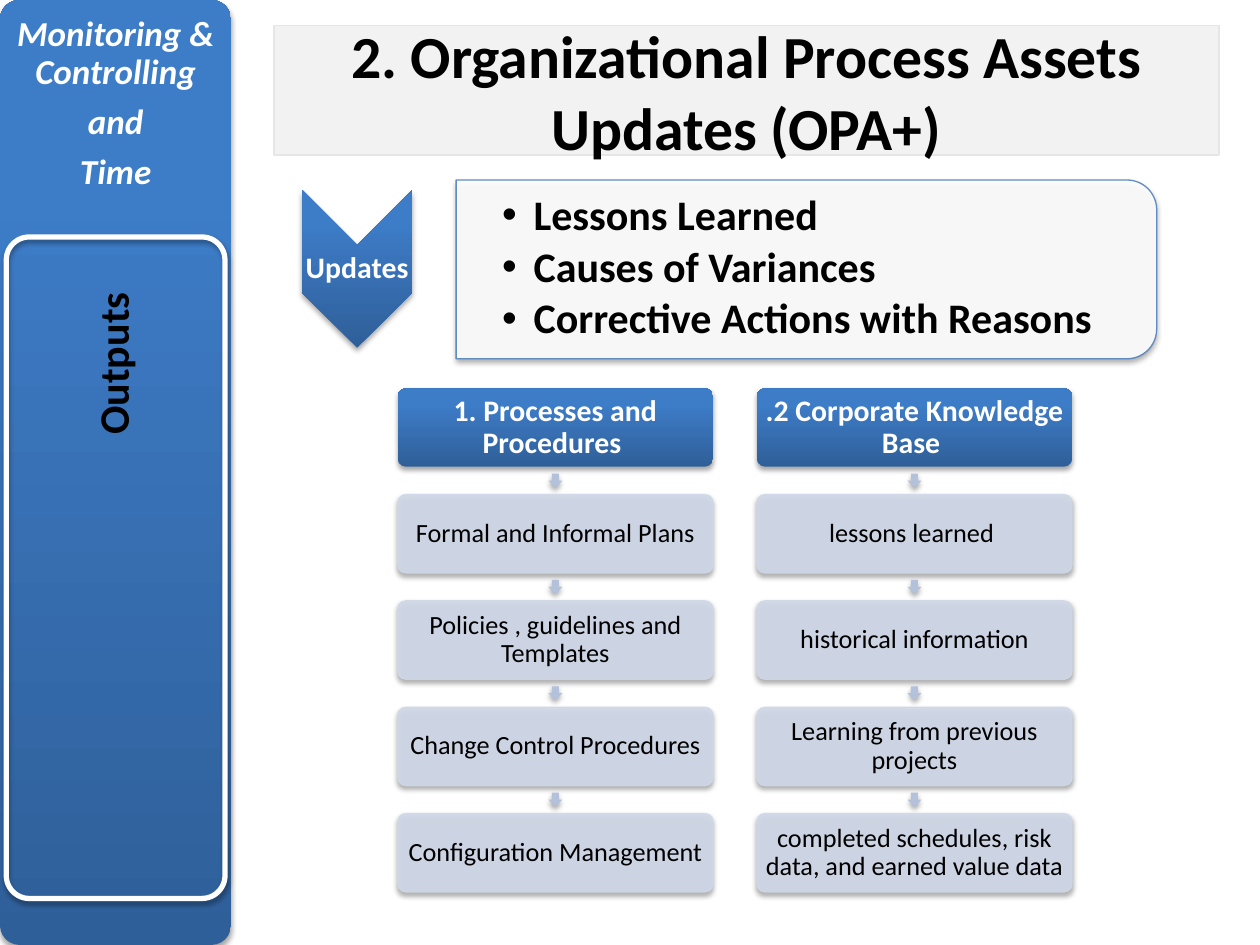
from lxml import etree
from pptx import Presentation
from pptx.dml.color import RGBColor
from pptx.enum.shapes import MSO_SHAPE
from pptx.enum.text import MSO_ANCHOR, PP_ALIGN
from pptx.oxml.ns import qn
from pptx.util import Pt

ROUND = MSO_SHAPE.ROUNDED_RECTANGLE
RECT = MSO_SHAPE.RECTANGLE
ARROW = MSO_SHAPE.DOWN_ARROW
CHEVRON = MSO_SHAPE.CHEVRON
TAB = MSO_SHAPE.ROUND_2_SAME_RECTANGLE
CENTER, LEFT = PP_ALIGN.CENTER, PP_ALIGN.LEFT
MIDDLE, TOP = MSO_ANCHOR.MIDDLE, MSO_ANCHOR.TOP

BLACK = RGBColor(0x00, 0x00, 0x00)
WHITE = RGBColor(0xFF, 0xFF, 0xFF)
DARK = RGBColor(0x2F, 0x5F, 0x99)
BRIGHT = RGBColor(0x3D, 0x7C, 0xC7)
EDGE = RGBColor(0x4F, 0x81, 0xBD)
PALE = RGBColor(0xD0, 0xD8, 0xE8)
STEEL = RGBColor(0xB3, 0xC1, 0xDB)
GREY = RGBColor(0xF2, 0xF2, 0xF2)
RIM = RGBColor(0xE6, 0xE6, 0xE6)

TITLE = {"size": Pt(34.1), "bold": True}
SIDE = {"size": Pt(20), "bold": True, "italic": True}
HEAD = {"size": Pt(17), "bold": True}
BODY = {"size": Pt(15)}
LARGE = {"size": Pt(24), "bold": True}
TIGHT = {"line_spacing": 0.9}

FLOWS = [
    ["1. Processes and Procedures ", "Formal and Informal Plans",
     "Policies , guidelines and Templates", "Change Control Procedures",
     "Configuration Management"],
    [".2 Corporate Knowledge Base ", "lessons learned ",
     "historical information", "Learning from previous projects",
     "completed schedules, risk data, and earned value data"],
]
POINTS = ["Lessons Learned", "Causes of Variances",
          "Corrective Actions with Reasons"]


def apply(target, form):
    for name, value in form.items():
        setattr(target, name, value)


def shade(shape):
    shape.shadow.inherit = False
    effects = shape._element.spPr.find(qn("a:effectLst"))
    drop = etree.SubElement(effects, qn("a:outerShdw"), blurRad=str(Pt(3.1)),
                            dist=str(Pt(1.8)), dir="5400000", rotWithShape="0")
    color = etree.SubElement(drop, qn("a:srgbClr"), val="000000")
    etree.SubElement(color, qn("a:alpha"), val="35000")


def fade(shape):
    for color in shape._element.spPr.iter(qn("a:srgbClr")):
        etree.SubElement(color, qn("a:alpha"), val="90000")


def blend(shape):
    fill = shape.fill
    fill.gradient()
    fill.gradient_angle = 90
    for stop, color, place in zip(fill.gradient_stops, (DARK, BRIGHT), (0, 0.8)):
        stop.color.rgb = color
        stop.position = place
    shape._element.spPr.find(qn("a:gradFill")).set("rotWithShape", "0")


def add_box(slide, kind, x, y, w, h, fill=None, line=None, width=0.75,
            curve=None, turn=0):
    shape = slide.shapes.add_shape(kind, Pt(x), Pt(y), Pt(w), Pt(h))
    shape.rotation = turn
    if curve is not None:
        shape.adjustments[0] = curve
    if fill is None:
        shape.fill.background()
    else:
        shape.fill.solid()
        shape.fill.fore_color.rgb = fill
    if line is None:
        shape.line.fill.background()
    else:
        shape.line.color.rgb = line
        shape.line.width = Pt(width)
    shape.shadow.inherit = False
    return shape


def write(shape, lines, font, color=BLACK, para=TIGHT, align=CENTER,
          anchor=MIDDLE, inset=1.8):
    frame = shape.text_frame
    edges = ("margin_left", "margin_top", "margin_right", "margin_bottom")
    apply(frame, dict.fromkeys(edges, Pt(inset)))
    apply(frame, {"word_wrap": True, "vertical_anchor": anchor})
    for i, line in enumerate(lines):
        item = frame.add_paragraph() if i else frame.paragraphs[0]
        apply(item, {"alignment": align, **para})
        run = item.add_run()
        run.text = line
        apply(run.font, {"name": "Calibri", **font})
        run.font.color.rgb = color


def add_text(slide, x, y, w, h, lines, font, **form):
    box = slide.shapes.add_textbox(Pt(x), Pt(y), Pt(w), Pt(h))
    write(box, lines, font, **form)
    return box


def add_flow(slide, x, y, cards):
    wide, high, pitch, tip = 180, 44.8, 60.75, 8
    for i, card in enumerate(cards):
        top = y + i * pitch
        if i:
            arrow = add_box(slide, ARROW, x + (wide - tip) / 2,
                            top - (pitch - high + tip) / 2, tip, tip, STEEL)
            shade(arrow)
        shape = add_box(slide, ROUND, x, top, wide, high, PALE,
                        PALE if i else None, curve=0.1)
        if i:
            fade(shape)
            write(shape, [card], BODY, inset=3)
        else:
            blend(shape)
            write(shape, [card], HEAD, WHITE, inset=3)
        shade(shape)


def add_points(slide):
    mark = add_box(slide, CHEVRON, 159, 122.4, 90, 62.6, BRIGHT, turn=90)
    blend(mark)
    shade(mark)
    add_text(slide, 172.8, 139.7, 62.6, 27.4, ["Updates"], HEAD,
             color=WHITE, inset=0.7)
    panel = add_box(slide, TAB, 409.7, -46.2, 102.2, 400.3, WHITE, EDGE, turn=90)
    fade(panel)
    shade(panel)
    box = add_text(slide, 273.2, 107.3, 383.5, 92.2, POINTS, LARGE, align=LEFT,
                   para={**TIGHT, "space_after": Pt(3.6)})
    for item in box.text_frame.paragraphs:
        props = item._p.get_or_add_pPr()
        props.set("marL", str(Pt(18)))
        props.set("indent", str(Pt(-18)))
        etree.SubElement(props, qn("a:buFont"), typeface="Arial")
        etree.SubElement(props, qn("a:buChar"), char="•")
    box.text_frame.margin_left = Pt(13.7)


def add_side(slide):
    bar = add_box(slide, ROUND, 0, 0, 132, 540, BRIGHT, curve=0.085)
    blend(bar)
    shade(bar)
    add_text(slide, 3.6, 3.6, 125, 114, ["Monitoring & Controlling", "and", "Time"],
             SIDE, color=WHITE, anchor=TOP, inset=5.8,
             para={**TIGHT, "space_after": Pt(7)})
    ring = add_box(slide, ROUND, 3.6, 135.4, 125, 378, line=WHITE, width=3,
                   curve=0.105)
    shade(ring)
    label = add_text(slide, 7.2, 139, 117.4, 137.5, ["Outputs"], LARGE, inset=7.2)
    label.text_frame._txBody.bodyPr.set("vert", "vert270")


def main():
    deck = Presentation()
    deck.slide_width, deck.slide_height = Pt(720), Pt(540)
    slide = deck.slides.add_slide(deck.slide_layouts[6])
    for i, cards in enumerate(FLOWS):
        add_flow(slide, 227.4 + i * 205.2, 221.9, cards)
    add_points(slide)
    add_side(slide)
    title = add_box(slide, RECT, 156.5, 14.6, 540, 74, GREY, RIM, 1)
    write(title, ["2. Organizational Process Assets Updates (OPA+)"], TITLE,
          para={}, inset=3.6)
    deck.save("out.pptx")


if __name__ == "__main__":
    main()
